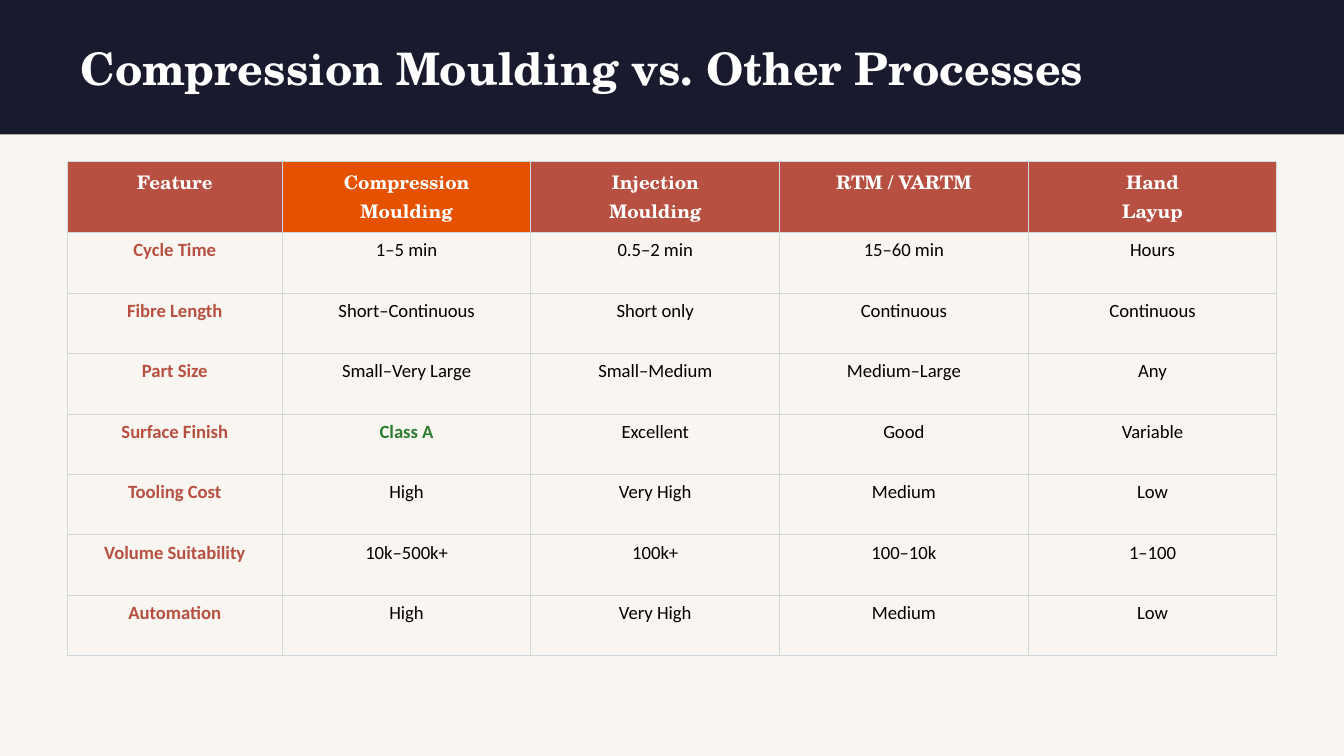
"""Builds a slide comparing compression moulding with other processes."""
from lxml import etree
from pptx import Presentation
from pptx import util as u
from pptx.dml.color import RGBColor
from pptx.enum import shapes, text
from pptx.oxml import ns

PX = u.Inches(1) // 200
HEADING_FONT = "TeX Gyre Schola"
BODY_FONT = "Calibri"
NAVY = RGBColor(0x1A, 0x1A, 0x2E)
CREAM = RGBColor(0xF9, 0xF5, 0xF0)
WHITE = RGBColor(0xFF, 0xFF, 0xFF)
BLACK = RGBColor(0x00, 0x00, 0x00)
TERRACOTTA = RGBColor(0xB8, 0x50, 0x42)
ORANGE = RGBColor(0xE6, 0x51, 0x00)
GREEN = RGBColor(0x2E, 0x7D, 0x32)
GRID = RGBColor(0xCF, 0xD8, 0xDC)

COLUMN_WIDTHS = [320, 370, 370, 370, 370]
HEADER_HEIGHT = 106
ROW_HEIGHT = 90
HIGHLIGHT = "Class A"
ROWS = [
    ["Feature", "Compression\nMoulding", "Injection\nMoulding", "RTM / VARTM", "Hand\nLayup"],
    ["Cycle Time", "1–5 min", "0.5–2 min", "15–60 min", "Hours"],
    ["Fibre Length", "Short–Continuous", "Short only", "Continuous", "Continuous"],
    ["Part Size", "Small–Very Large", "Small–Medium", "Medium–Large", "Any"],
    ["Surface Finish", HIGHLIGHT, "Excellent", "Good", "Variable"],
    ["Tooling Cost", "High", "Very High", "Medium", "Low"],
    ["Volume Suitability", "10k–500k+", "100k+", "100–10k", "1–100"],
    ["Automation", "High", "Very High", "Medium", "Low"],
]


def px(*lengths):
    return [u.Emu(length * PX) for length in lengths]


def set_font(paragraph, name, size, color, bold):
    font = paragraph.font
    font.name, font.size, font.bold = name, u.Pt(size), bold
    font.color.rgb = color


def add_band(slide, box):
    shape = slide.shapes.add_shape(shapes.MSO_SHAPE.RECTANGLE, *px(*box))
    shape.shadow.inherit = False
    shape.fill.solid()
    shape.fill.fore_color.rgb = NAVY
    shape.line.fill.background()


def add_title(slide, box, title):
    frame = slide.shapes.add_textbox(*px(*box)).text_frame
    frame.word_wrap = True
    frame.vertical_anchor = text.MSO_ANCHOR.MIDDLE
    frame.margin_left = frame.margin_top = frame.margin_right = frame.margin_bottom = 0
    frame.text = title
    set_font(frame.paragraphs[0], HEADING_FONT, 24, WHITE, True)


def add_borders(cell):
    properties = cell._tc.get_or_add_tcPr()
    for side in ("lnL", "lnR", "lnT", "lnB"):
        line = etree.SubElement(properties, ns.qn(f"a:{side}"), w=str(u.Pt(0.5)))
        fill = etree.SubElement(line, ns.qn("a:solidFill"))
        etree.SubElement(fill, ns.qn("a:srgbClr"), val=str(GRID))


def cell_style(row, column, value):
    """Returns font name, text colour, boldness and fill colour."""
    if row == 0:
        return HEADING_FONT, WHITE, True, ORANGE if column == 1 else TERRACOTTA
    if column == 0:
        return BODY_FONT, TERRACOTTA, True, None
    if value == HIGHLIGHT:
        return BODY_FONT, GREEN, True, None
    return BODY_FONT, BLACK, False, None


def fill_cell(cell, value, name, color, bold, fill):
    add_borders(cell)
    if fill is None:
        cell.fill.background()
    else:
        cell.fill.solid()
        cell.fill.fore_color.rgb = fill
    cell.text = value
    for paragraph in cell.text_frame.paragraphs:
        paragraph.alignment = text.PP_ALIGN.CENTER
        set_font(paragraph, name, 10, color, bold)


def add_comparison_table(slide, box):
    frame = slide.shapes.add_table(len(ROWS), len(COLUMN_WIDTHS), *px(*box))
    table = frame.table
    table.first_row = table.horz_banding = False
    for column, width in zip(table.columns, px(*COLUMN_WIDTHS)):
        column.width = width
    header_height, row_height = px(HEADER_HEIGHT, ROW_HEIGHT)
    for row, values in enumerate(ROWS):
        table.rows[row].height = row_height if row else header_height
        for column, value in enumerate(values):
            fill_cell(table.cell(row, column), value, *cell_style(row, column, value))


def main():
    presentation = Presentation()
    presentation.slide_width, presentation.slide_height = px(2000, 1125)
    slide = presentation.slides.add_slide(presentation.slide_layouts[6])
    slide.background.fill.solid()
    slide.background.fill.fore_color.rgb = CREAM
    add_band(slide, (0, 0, 2000, 200))
    add_title(slide, (120, 30, 1700, 140), "Compression Moulding vs. Other Processes")
    table_height = HEADER_HEIGHT + ROW_HEIGHT * (len(ROWS) - 1)
    add_comparison_table(slide, (100, 240, sum(COLUMN_WIDTHS), table_height))
    presentation.save("out.pptx")


if __name__ == "__main__":
    main()
